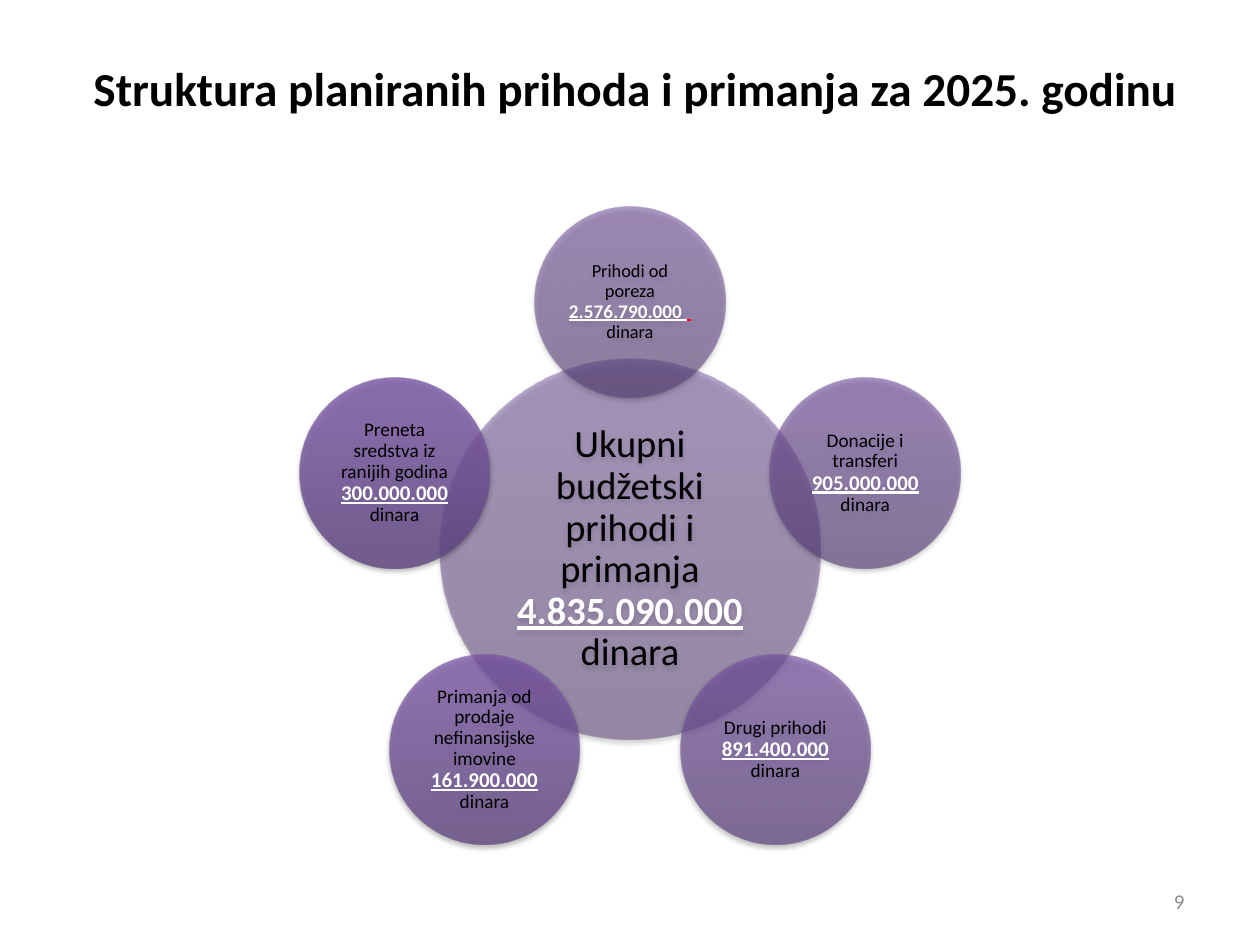
from math import cos, radians, sin

from lxml.etree import SubElement
from pptx import Presentation
from pptx.dml.color import RGBColor
from pptx.enum.shapes import MSO_SHAPE
from pptx.enum.text import MSO_ANCHOR, PP_ALIGN
from pptx.oxml.ns import qn
from pptx.util import Pt

FONT = "Calibri"
BLACK, WHITE, RED, GREY = "000000", "FFFFFF", "FF0000", "8C8C8C"
CENTER_X, CENTER_Y = 360, 314
ORBIT_RADIUS = 141.4
TOTAL_DIAMETER, SOURCE_DIAMETER = 217.6, 108.8
STOP_POSITIONS = (0, 80, 100)

# gradient colours, opacity in percent
TOTAL_FILL = (("563D74", "705097", "704F99"), 50)
SOURCE_FILLS = [
    (("583E77", "72519A", "73509C"), 56),
    (("5A407A", "75539E", "7551A0"), 62),
    (("5C417C", "7754A1", "7753A4"), 68),
    (("5E427E", "7956A4", "7A55A6"), 74),
    (("5F4580", "7C59A6", "7C58A8"), 80),
]


def color(hex_value):
    return RGBColor.from_string(hex_value)


def add_run(paragraph, text, size, hex_value, **formats):
    run = paragraph.add_run()
    run.text = text
    run.font.color.rgb = color(hex_value)
    for name, value in {"name": FONT, "size": Pt(size), **formats}.items():
        setattr(run.font, name, value)


def amount_runs(label, amount, label_size, amount_size):
    """Runs for a label, its underlined amount and the currency."""
    return [
        (label + " ", label_size, BLACK, {}),
        (amount, amount_size, WHITE, {"bold": True, "underline": True}),
        (" dinara", label_size, BLACK, {}),
    ]


def add_text_box(slide, box, text, size, hex_value, alignment, bold=False):
    text_box = slide.shapes.add_textbox(*map(Pt, box))
    frame = text_box.text_frame
    frame.word_wrap = True
    frame.vertical_anchor = MSO_ANCHOR.MIDDLE
    paragraph = frame.paragraphs[0]
    paragraph.alignment = alignment
    add_run(paragraph, text, size, hex_value, bold=bold)


def add_color(parent, hex_value, opacity):
    element = SubElement(parent, qn("a:srgbClr"), val=hex_value)
    SubElement(element, qn("a:alpha"), val=str(opacity * 1000))


def set_gradient(shape, colors, opacity):
    """Fill upwards with a translucent gradient."""
    shape.fill.gradient()
    shape.fill.gradient_angle = 90
    stops = shape.element.spPr.find(qn("a:gradFill")).find(qn("a:gsLst"))
    for stop in list(stops):
        stops.remove(stop)
    for position, hex_value in zip(STOP_POSITIONS, colors):
        stop = SubElement(stops, qn("a:gs"), pos=str(position * 1000))
        add_color(stop, hex_value, opacity)


def set_soft_shadow(shape):
    shape.shadow.inherit = False
    effects = shape.element.spPr.find(qn("a:effectLst"))
    shadow = SubElement(effects, qn("a:outerShdw"), blurRad=str(Pt(3.1)),
                        dist=str(Pt(1.8)), dir="5400000", rotWithShape="0")
    add_color(shadow, BLACK, 35)


def add_circle(slide, center_x, center_y, diameter, fill, runs, inset):
    circle = slide.shapes.add_shape(
        MSO_SHAPE.OVAL, Pt(center_x - diameter / 2), Pt(center_y - diameter / 2),
        Pt(diameter), Pt(diameter))
    set_gradient(circle, *fill)
    circle.line.fill.background()
    set_soft_shadow(circle)
    frame = circle.text_frame
    frame_formats = {"word_wrap": True, "vertical_anchor": MSO_ANCHOR.MIDDLE}
    for side in ("left", "top", "right", "bottom"):
        frame_formats["margin_" + side] = Pt(inset)
    for name, value in frame_formats.items():
        setattr(frame, name, value)
    paragraph = frame.paragraphs[0]
    paragraph.alignment = PP_ALIGN.CENTER
    paragraph.line_spacing = 0.9
    for text, size, hex_value, formats in runs:
        add_run(paragraph, text, size, hex_value, **formats)


def main():
    presentation = Presentation()
    presentation.slide_width, presentation.slide_height = Pt(720), Pt(540)
    slide = presentation.slides.add_slide(presentation.slide_layouts[6])

    add_text_box(slide, (39, 19.5, 648, 61),
                 "Struktura planiranih prihoda i primanja za 2025. godinu",
                 27, BLACK, PP_ALIGN.CENTER, bold=True)
    add_text_box(slide, (516, 500.5, 168, 28.8), "9", 12, GREY, PP_ALIGN.RIGHT)

    add_circle(slide, CENTER_X, CENTER_Y, TOTAL_DIAMETER, TOTAL_FILL,
               amount_runs("Ukupni budžetski prihodi i primanja",
                           "4.835.090.000", 22, 22), 2.2)

    tax_runs = amount_runs("Prihodi od poreza", "2.576.790.000 ", 10.5, 11)
    tax_runs.insert(2, (" ", 11, RED, {"underline": True}))
    sources = [
        tax_runs,
        amount_runs("Donacije i transferi", "905.000.000", 11, 12),
        amount_runs("Drugi prihodi", "891.400.000", 11, 12),
        amount_runs("Primanja od prodaje nefinansijske imovine",
                    "161.900.000", 11, 12),
        amount_runs("Preneta sredstva iz ranijih godina", "300.000.000", 11, 12),
    ]
    for index, (runs, fill) in enumerate(zip(sources, SOURCE_FILLS)):
        angle = radians(360 / len(sources) * index - 90)
        add_circle(slide, CENTER_X + ORBIT_RADIUS * cos(angle),
                   CENTER_Y + ORBIT_RADIUS * sin(angle),
                   SOURCE_DIAMETER, fill, runs, 1.4)

    presentation.save("out.pptx")


if __name__ == "__main__":
    main()
